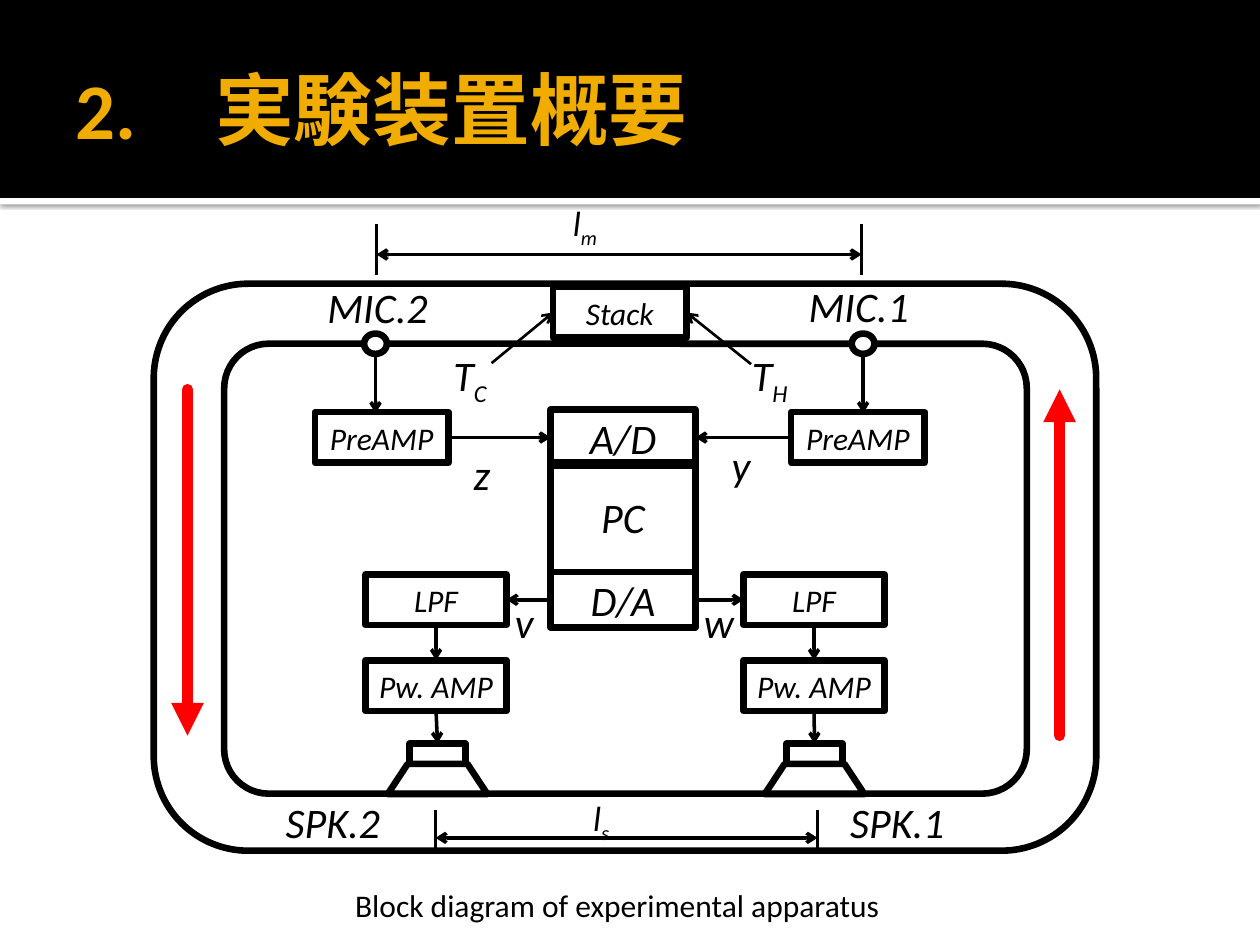
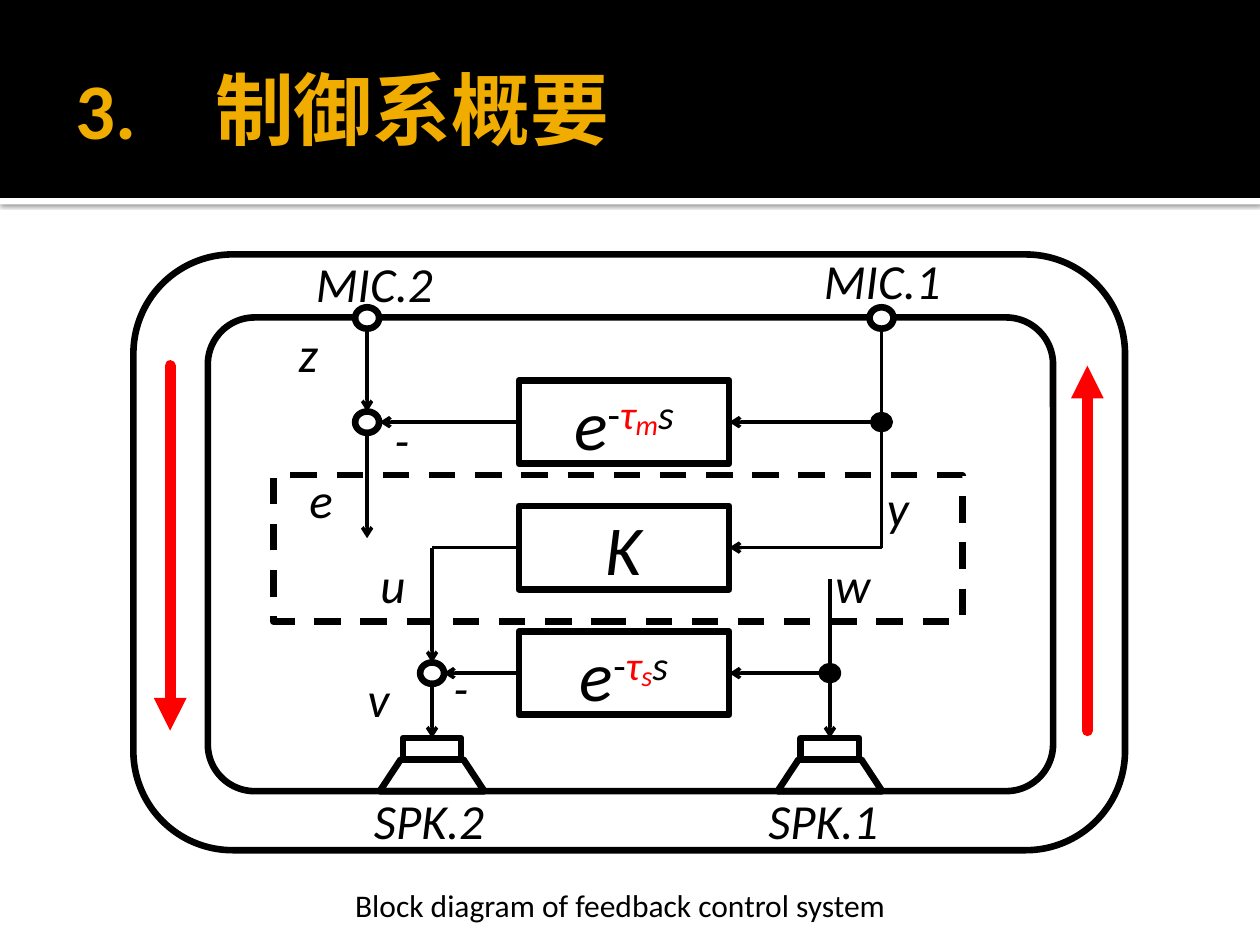
from pptx import Presentation
from pptx.dml.color import RGBColor
from pptx.enum.dml import MSO_LINE
from pptx.enum.shapes import MSO_CONNECTOR as Link, MSO_SHAPE as Kind
from pptx.enum.text import MSO_ANCHOR as Anchor, PP_ALIGN as Align
from pptx.oxml import parse_xml
from pptx.oxml.ns import nsdecls, qn
from pptx.util import Cm, Pt
from lxml import etree

BLACK = RGBColor(0, 0, 0)
WHITE = RGBColor(255, 255, 255)
GOLD = RGBColor(0xF0, 0xAD, 0x00)
RED = RGBColor(255, 0, 0)
FONT = "Calibri"
BOLD_LINE = 3.78
TOP, LEFT, BOTTOM, RIGHT = range(4)


# Text

def write(frame, runs, size, color=BLACK, italic=True, bold=False):
    """Each run is a text, or a text with its own base, size, color, italic."""
    para = frame.paragraphs[0]
    for part in runs:
        text, own = (part, {}) if isinstance(part, str) else part
        run = para.add_run()
        run.text = text
        font = run.font
        font.name = FONT
        font.size = Pt(own.get("size", size))
        font.color.rgb = own.get("color", color)
        font.italic = own.get("italic", italic)
        font.bold = bold
        if "base" in own:
            run._r.get_or_add_rPr().set("baseline", str(own["base"] * 1000))
    return para


def label(slide, x, y, runs, size, width=1.57, **style):
    box = slide.shapes.add_textbox(Cm(x), Cm(y), Cm(width), Cm(size * 0.053))
    box.text_frame.word_wrap = False
    write(box.text_frame, runs, size, **style)


def low(text):
    return text, {"base": -25}


# Shapes

def shape(slide, kind, x, y, w, h, fill=None, line=BLACK):
    item = slide.shapes.add_shape(kind, Cm(x), Cm(y), Cm(w), Cm(h))
    item.shadow.inherit = False
    if fill is None:
        item.fill.background()
    else:
        item.fill.solid()
        item.fill.fore_color.rgb = fill
    if line is None:
        item.line.fill.background()
    else:
        item.line.color.rgb = line
        item.line.width = Pt(BOLD_LINE)
    return item


def block(slide, x, y, w, h, runs, size):
    item = shape(slide, Kind.FLOWCHART_PROCESS, x, y, w, h)
    frame = item.text_frame
    frame.word_wrap = False
    frame.vertical_anchor = Anchor.MIDDLE
    write(frame, runs, size).alignment = Align.CENTER
    return item


def node(slide, x, y, w, h, fill=WHITE):
    """Circle placed by its centre."""
    shape(slide, Kind.FLOWCHART_CONNECTOR, x - w / 2, y - h / 2, w, h, fill)


def ring(slide, x, y, scale=1):
    node(slide, x, y, 0.46 * scale, 0.41 * scale)


def speaker(slide, x, y, scale=1):
    """Speaker with its top middle at x, y; returns the upper part."""
    wide, tall, slim, cap = (n * scale for n in (2.01, 0.61, 1.12, 0.41))
    horn = shape(slide, Kind.FLOWCHART_MANUAL_OPERATION,
                 x - wide / 2, y + cap, wide, tall)
    horn.rotation = 180
    return shape(slide, Kind.FLOWCHART_PROCESS, x - slim / 2, y, slim, cap)


# Lines

def spot(end):
    """Point for an x, y pair in cm or for a shape and one of its sides."""
    first, second = end
    if isinstance(first, (int, float)):
        return Cm(first), Cm(second)
    across = (0.5, 0, 0.5, 1)[second]
    down = (0, 0.5, 1, 0.5)[second]
    return (int(first.left + first.width * across),
            int(first.top + first.height * down))


def line(slide, start, end, head=None, tail=None, color=BLACK, width=2):
    item = slide.shapes.add_connector(Link.STRAIGHT, *spot(start), *spot(end))
    for stop, join in ((start, item.begin_connect), (end, item.end_connect)):
        if not isinstance(stop[0], (int, float)):
            join(*stop)
    item.line.color.rgb = color
    item.line.width = Pt(width)
    edge = item.line._get_or_add_ln()
    for tag, tip in (("a:headEnd", head), ("a:tailEnd", tail)):
        if tip:
            etree.SubElement(edge, qn(tag)).set("type", tip)
    etree.SubElement(item._element.spPr, qn("a:effectLst"))
    return item


def arrow(slide, start, end, **style):
    line(slide, start, end, tail="arrow", **style)


def gauge(slide, x1, x2, y, top, base):
    """Length mark: a double arrow between two ticks."""
    for x in (x1, x2):
        line(slide, (x, base), (x, top))
    line(slide, (x1, y), (x2, y), head="arrow", tail="arrow")


# Shared parts

def duct(slide, outer, inner, x1, x2, top, base):
    """Looped tube with the red flow arrows on both sides."""
    shape(slide, Kind.ROUNDED_RECTANGLE, *outer)
    shape(slide, Kind.ROUNDED_RECTANGLE, *inner).adjustments[0] = 0.099
    for start, end in (((x1, top), (x1, base)), ((x2, base), (x2, top))):
        flow = line(slide, start, end, tail="triangle", color=RED, width=6.25)
        flow.line._get_or_add_ln().set("cap", "rnd")


def page(deck, title, note):
    slide = deck.slides.add_slide(deck.slide_layouts[6])
    # Bands
    strip = shape(slide, Kind.RECTANGLE, 0, 3.99, 25.4, 0.13, WHITE, None)
    shade = strip._element.spPr.find(qn("a:effectLst"))
    shade.append(parse_xml(
        f'<a:outerShdw {nsdecls("a")} blurRad="31750" dist="10160" '
        'dir="5400000" rotWithShape="0"><a:srgbClr val="000000">'
        '<a:alpha val="60000"/></a:srgbClr></a:outerShdw>'))
    shape(slide, Kind.RECTANGLE, 0, 0, 25.4, 3.99, BLACK, None)
    # Title
    box = slide.shapes.add_textbox(Cm(1.27), Cm(0.43), Cm(22.86), Cm(3.48))
    frame = box.text_frame
    frame.word_wrap = True
    frame.vertical_anchor = Anchor.MIDDLE
    frame.margin_right = Cm(0.13)
    write(frame, [title], 45, color=GOLD, italic=False, bold=True)
    # Caption
    label(slide, 6.91, 17.73, [note], 18, width=11.61, italic=False)
    return slide


# Slide 1

def rig(deck):
    slide = page(deck, "2.　実験装置概要",
                 "Block diagram of experimental apparatus")
    duct(slide, (3.1, 5.72, 19, 11.43), (4.52, 6.93, 16.18, 9.07),
         3.78, 21.36, 7.85, 14.83)

    # Computer and stack
    adc = block(slide, 11.1, 8.26, 2.92, 1.12, ["A/D"], 24)
    block(slide, 11.1, 9.32, 2.92, 2.21, ["PC"], 24)
    dac = block(slide, 11.1, 11.53, 2.92, 1.12, ["D/A"], 24)
    stack = block(slide, 11.15, 5.79, 2.69, 1.02, ["Stack"], 18)
    arrow(slide, (9.91, 7.32), (stack, LEFT), width=1.5)
    arrow(slide, (15.14, 7.34), (stack, RIGHT), width=1.5)

    # Both signal chains: microphone in, speaker out
    for mic, pre, amp, horn, near, far in (
            (7.57, 6.35, 7.37, 8.82, LEFT, RIGHT),
            (17.4, 15.95, 14.99, 16.42, RIGHT, LEFT)):
        ring(slide, mic, 6.93)
        gain = block(slide, pre, 8.31, 2.69, 1.02, ["PreAMP"], 18)
        arrow(slide, (mic, 7.14), (mic, 8.33))
        arrow(slide, (gain, far), (adc, near))
        lpf = block(slide, amp, 11.58, 2.84, 1.02, ["LPF"], 18)
        power = block(slide, amp, 13.31, 2.84, 1.02, ["Pw. AMP"], 18)
        cone = speaker(slide, horn, 14.99)
        arrow(slide, (dac, near), (lpf, far))
        arrow(slide, (lpf, BOTTOM), (power, TOP))
        arrow(slide, (power, BOTTOM), (cone, TOP))

    # Lengths
    gauge(slide, 7.59, 17.37, 5.13, 4.52, 5.54)
    gauge(slide, 8.78, 16.48, 16.89, 16.33, 17.09)
    label(slide, 11.3, 3.94, ["l", low("m")], 20)
    label(slide, 11.71, 15.93, ["l", low("s")], 20)

    # Names
    for x, y, *runs in (
            (13.94, 11.91, "w"), (14.5, 8.74, "y"),
            (10.13, 11.91, "v"), (9.3, 8.92, "z"),
            (8.89, 6.93, "T", low("C")), (14.91, 6.93, "T", low("H"))):
        label(slide, x, y, runs, 24)
    for x, y, name in ((16.05, 5.54, "MIC.1"), (6.35, 5.56, "MIC.2"),
                       (16.89, 15.93, "SPK.1"), (5.51, 15.93, "SPK.2")):
        label(slide, x, y, [name], 24, width=3.58)


# Slide 2

def delay(sub):
    """Runs of the delay term e to the power of -τs."""
    return ["e", ("-", {"base": 30, "italic": False}),
            ("τ", {"base": 30, "color": RED}),
            (sub, {"base": 30, "color": RED, "size": 28}),
            ("s", {"base": 30})]


def control(deck):
    slide = page(deck, "3.　制御系概要",
                 "Block diagram of feedback control system")
    duct(slide, (2.69, 5.13, 19.99, 12.01), (4.19, 6.4, 17.04, 9.55),
         3.43, 21.92, 7.37, 14.73)

    # Blocks at equal steps, with the rows of their centres
    rows = [8.51 + 2.53 * n for n in range(3)]
    first, mid, last = rows
    wave, gain, echo = (
        block(slide, 10.46, y - 0.84, 4.24, 1.68, runs, 40)
        for y, runs in zip(rows, (delay("m"), ["K"], delay("s"))))
    frame = shape(slide, Kind.RECTANGLE, 5.51, 9.58, 13.89, 2.95)
    frame.line.dash_style = MSO_LINE.DASH

    # Columns: microphones and speakers
    mic2, mic1, spk2, spk1 = 7.4, 17.77, 8.71, 16.73
    left, right = (speaker(slide, x, 14.88, 1.05) for x in (spk2, spk1))

    # Right side
    line(slide, (mic1, 6.6), (mic1, first))
    line(slide, (mic1, first), (mic1, mid))
    arrow(slide, (mic1, first), (wave, RIGHT))
    arrow(slide, (mic1, mid), (gain, RIGHT))
    arrow(slide, (spk1, 11.68), (right, TOP))
    arrow(slide, (spk1, last), (echo, RIGHT))

    # Left side
    arrow(slide, (mic2, 6.6), (mic2, 8.3))
    arrow(slide, (mic2, 8.72), (mic2, 10.85))
    arrow(slide, (wave, LEFT), (7.65, first))
    line(slide, (gain, LEFT), (spk2, mid))
    arrow(slide, (spk2, mid), (spk2, 13.36))
    arrow(slide, (echo, LEFT), (8.94, last))
    arrow(slide, (spk2, 13.79), (left, TOP))

    # Rings and branch dots
    for x, y in ((mic2, 6.41), (mic1, 6.41), (mic2, first), (spk2, last)):
        ring(slide, x, y, 1.05)
    for x, y in ((mic1, first), (spk1, last)):
        node(slide, x, y, 0.33, 0.28, BLACK)

    # Names
    for x, y, name, width in (
            (16.59, 11.05, "w", 1.65), (17.63, 9.5, "y", 1.65),
            (5.99, 9.35, "e", 1.65), (7.42, 11.05, "u", 1.65),
            (7.16, 13.36, "v", 1.65), (5.77, 6.4, "z", 1.65),
            (8.89, 13.13, "-", 0.99), (7.7, 8.13, "-", 0.99),
            (16.36, 4.93, "MIC.1", 3.76), (6.12, 4.98, "MIC.2", 3.76),
            (15.24, 15.82, "SPK.1", 3.76), (7.29, 15.82, "SPK.2", 3.76)):
        label(slide, x, y, [name], 28, width=width)


def main():
    deck = Presentation()
    deck.slide_width, deck.slide_height = Cm(25.4), Cm(19.05)
    rig(deck)
    control(deck)
    deck.save("out.pptx")


if __name__ == "__main__":
    main()
